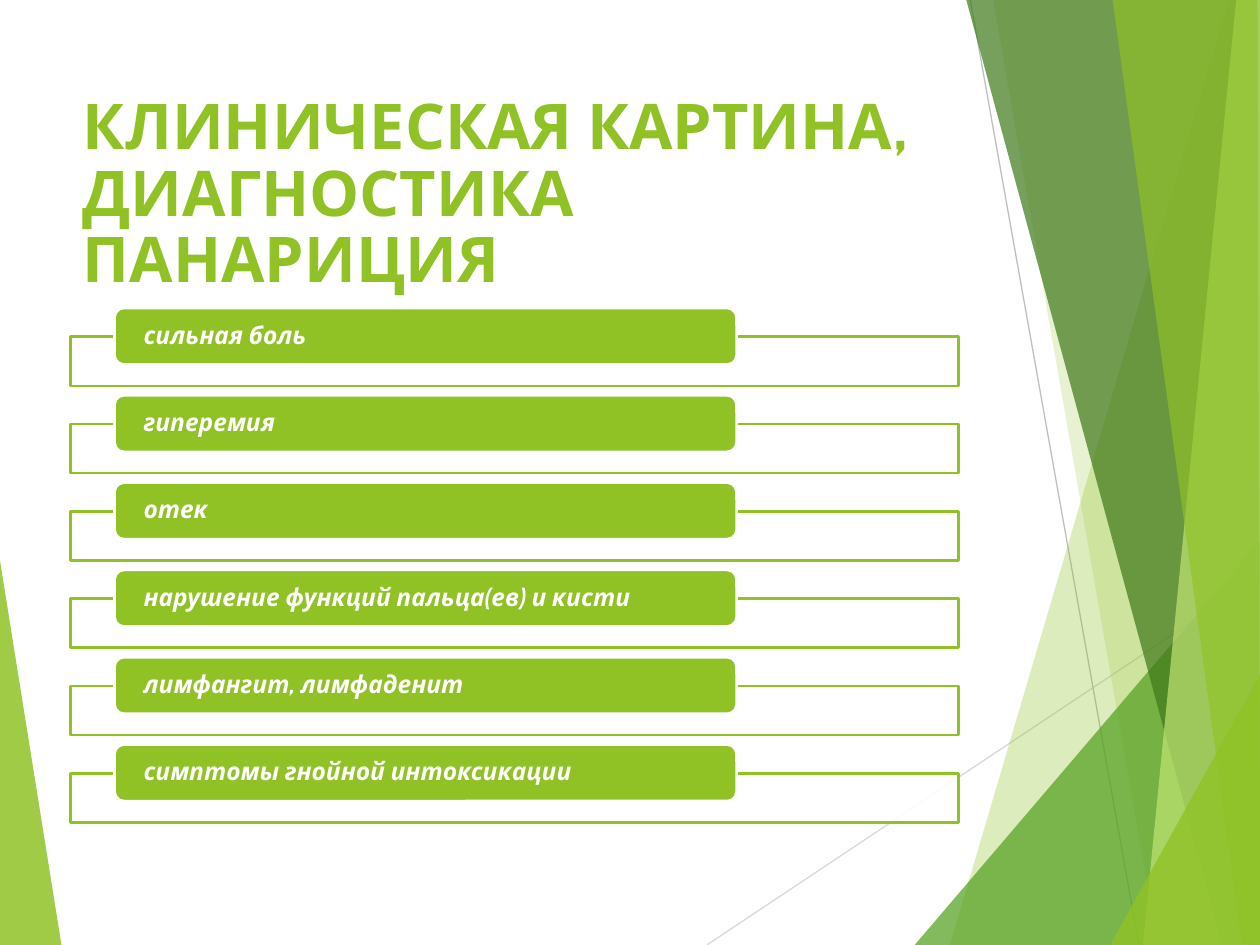
from dataclasses import dataclass

import pptx
import pptx.dml.color
import pptx.enum.shapes
import pptx.enum.text
import pptx.oxml
import pptx.oxml.ns
import pptx.util
from pptx.util import Cm

WIDTH, HEIGHT = 25.4, 19.05


@dataclass(frozen=True)
class Theme:
    font: str = "Cabin"
    lime: str = "90C226"
    green: str = "54A021"
    dark_green: str = "3F7819"
    pale_lime: str = "C0E474"
    white: str = "FFFFFF"
    light_gray: str = "D9D9D9"
    gray: str = "BFBFBF"
    title_size: int = 36
    item_size: int = 14
    hairline: float = 0.75
    outline: float = 1.5


class SlideBuilder:
    def __init__(self, slide, theme):
        self.slide = slide
        self.theme = theme

    def fill(self, shape, color, opacity=100):
        shape.shadow.inherit = False
        shape.fill.solid()
        shape.fill.fore_color.rgb = pptx.dml.color.RGBColor.from_string(color)
        if opacity < 100:
            color_element = shape._element.spPr.find(
                "./" + pptx.oxml.ns.qn("a:solidFill") + "/" + pptx.oxml.ns.qn("a:srgbClr"))
            color_element.append(pptx.oxml.parse_xml(
                f'<a:alpha {pptx.oxml.ns.nsdecls("a")} val="{opacity * 1000}"/>'))

    def stroke(self, shape, color, width):
        shape.line.color.rgb = pptx.dml.color.RGBColor.from_string(color)
        shape.line.width = pptx.util.Pt(width)

    def polygon(self, points, color, opacity):
        corners = [(Cm(x), Cm(y)) for x, y in points]
        builder = self.slide.shapes.build_freeform(*corners[0])
        builder.add_line_segments(corners[1:], close=True)
        shape = builder.convert_to_shape()
        self.fill(shape, color, opacity)
        shape.line.fill.background()

    def band(self, top_left, bottom_left, color, opacity, top_right=WIDTH):
        """Full-height facet that reaches the right edge of the slide."""
        self.polygon([(top_left, 0), (bottom_left, HEIGHT), (WIDTH, HEIGHT),
                      (top_right, 0)], color, opacity)

    def line(self, start, end, color):
        connector = self.slide.shapes.add_connector(
            pptx.enum.shapes.MSO_CONNECTOR.STRAIGHT,
            *(Cm(value) for value in (*start, *end)))
        self.stroke(connector, color, self.theme.hairline)
        connector._element.spPr.append(pptx.oxml.parse_xml(
            f'<a:effectLst {pptx.oxml.ns.nsdecls("a")}/>'))

    def box(self, kind, bounds, color, line_color, opacity=100):
        shape = self.slide.shapes.add_shape(kind, *(Cm(value) for value in bounds))
        self.fill(shape, color, opacity)
        self.stroke(shape, line_color, self.theme.outline)
        return shape

    def add_text(self, shape, text, size, color, insets, anchor, spacing, italic=False):
        frame = shape.text_frame
        frame.word_wrap = True
        frame.vertical_anchor = anchor
        side, vertical = insets
        frame.margin_left = frame.margin_right = Cm(side)
        frame.margin_top = frame.margin_bottom = Cm(vertical)
        paragraph = frame.paragraphs[0]
        paragraph.alignment = pptx.enum.text.PP_ALIGN.LEFT
        paragraph.line_spacing = spacing
        run = paragraph.add_run()
        run.text = text
        run.font.name = self.theme.font
        run.font.size = pptx.util.Pt(size)
        run.font.bold = True
        run.font.italic = italic
        run.font.color.rgb = pptx.dml.color.RGBColor.from_string(color)

    def title(self, text, bounds):
        shape = self.slide.shapes.add_textbox(*(Cm(value) for value in bounds))
        self.add_text(shape, text, self.theme.title_size, self.theme.lime, (0.25, 0.25),
                      pptx.enum.text.MSO_ANCHOR.TOP, 0.88)

    def list_item(self, text, top):
        """Outlined frame with a rounded label over its upper edge."""
        theme = self.theme
        shapes = pptx.enum.shapes.MSO_SHAPE
        self.box(shapes.RECTANGLE, (1.42, top + 0.58, 17.91, 0.99),
                 theme.white, theme.lime, opacity=90)
        label = self.box(shapes.ROUNDED_RECTANGLE, (2.31, top, 12.54, 1.14),
                         theme.lime, theme.white)
        self.add_text(label, text, theme.item_size, theme.white, (0.53, 0),
                      pptx.enum.text.MSO_ANCHOR.MIDDLE, 0.9, italic=True)

    def backdrop(self):
        theme = self.theme
        self.polygon([(0, 11.3), (1.24, HEIGHT), (0, HEIGHT)], theme.lime, 85)
        self.line((14.25, HEIGHT), (WIDTH, 11.62), theme.light_gray)
        self.line((19.56, 0), (22.96, HEIGHT), theme.gray)
        self.band(24.77, 19.15, theme.lime, 30)
        self.band(20.02, 23.34, theme.lime, 20)
        self.polygon([(18.44, HEIGHT), (WIDTH, 10.9), (WIDTH, HEIGHT)], theme.green, 72)
        self.band(19.48, 24.64, theme.dark_green, 70)
        self.band(24.92, 23.04, theme.pale_lime, 70)
        self.band(22.43, 25.04, theme.lime, 65, top_right=25.35)
        self.polygon([(22.38, HEIGHT), (WIDTH, 13.6), (WIDTH, HEIGHT)], theme.lime, 80)


SYMPTOMS = [
    "сильная боль",
    "гиперемия",
    "отек",
    "нарушение функций пальца(ев) и кисти",
    "лимфангит, лимфаденит",
    "симптомы гнойной интоксикации",
]
FIRST_TOP, PITCH = 6.21, 1.76


def main():
    presentation = pptx.Presentation()
    presentation.slide_width = Cm(WIDTH)
    presentation.slide_height = Cm(HEIGHT)
    slide = presentation.slides.add_slide(presentation.slide_layouts[6])
    builder = SlideBuilder(slide, Theme())
    builder.backdrop()
    builder.title("КЛИНИЧЕСКАЯ КАРТИНА, ДИАГНОСТИКА ПАНАРИЦИЯ", (1.42, 1.7, 17.91, 3.66))
    for index, symptom in enumerate(SYMPTOMS):
        builder.list_item(symptom, FIRST_TOP + index * PITCH)
    presentation.save("out.pptx")


if __name__ == "__main__":
    main()
